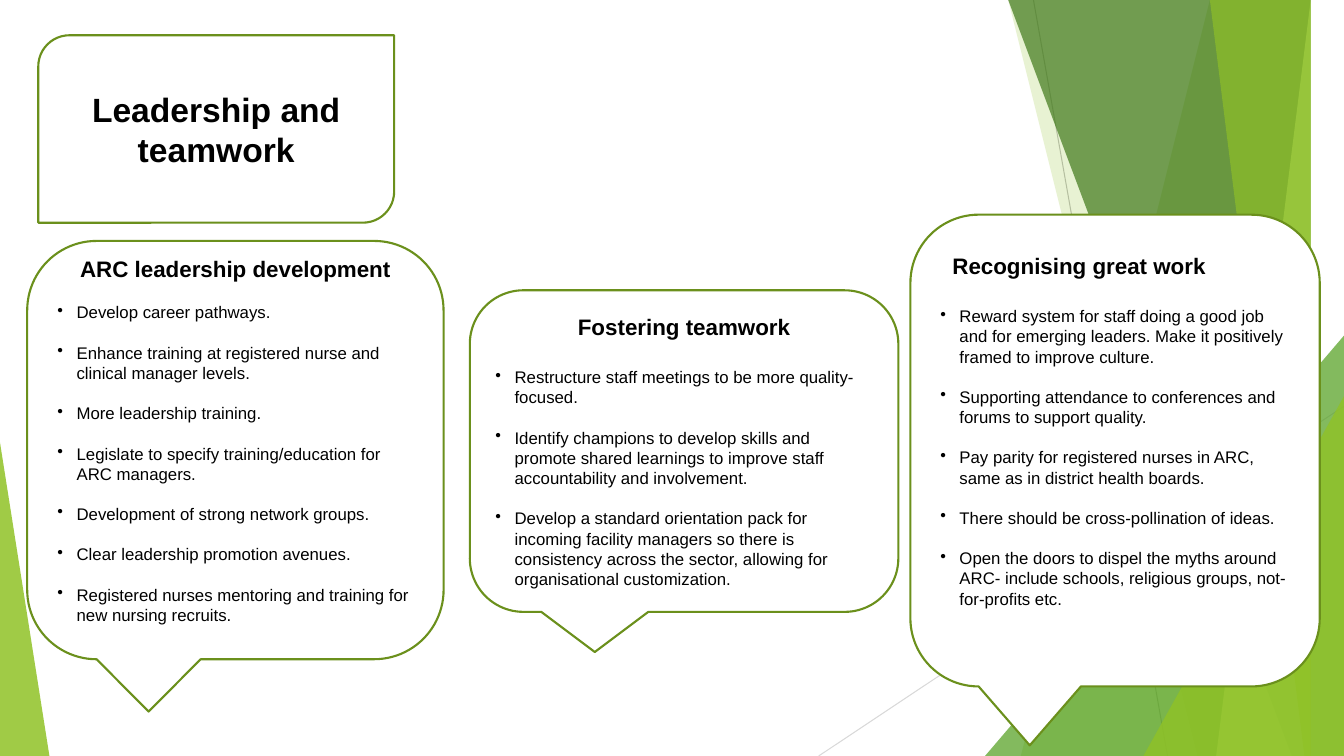
import pptx
import pptx.dml.color
import pptx.enum.shapes
import pptx.enum.text
import pptx.oxml
import pptx.oxml.ns
import pptx.util
from lxml import etree

Inches, Pt = pptx.util.Inches, pptx.util.Pt
SHAPE = pptx.enum.shapes.MSO_SHAPE
ALIGN = pptx.enum.text.PP_ALIGN
qn = pptx.oxml.ns.qn

W, H = 13.33, 7.5
FONT = "Arial"
LEADING = 1.2
INSET = 0.05
BULLET_INDENT = 0.19
COLORS = {
    "white": "FFFFFF", "black": "000000", "outline": "6B901C",
    "lime": "90C226", "green": "54A021", "forest": "3F7819", "pale": "C0E474",
    "gray": "BFBFBF", "light gray": "D9D9D9",
}

# start, end, colour
RAYS = [
    ((10.25, 0), (11.58, H), "gray"),
    ((W, 4.03), (8.12, H), "light gray"),
]
# Bands reach the right edge: ("band", top x, bottom x, colour, opacity %)
# Wedges stand on the bottom edge: ("wedge", left, top, width, apex share, colour, opacity %)
BACKDROP = [
    ("band", 12.28, 10.04, "lime", 30),
    ("band", 10.5, 11.83, "lime", 20),
    ("wedge", 9.77, 3.33, 3.56, 1, "green", 72),
    ("band", 10.21, 12.91, "forest", 70),
    ("band", 13.03, 11.92, "pale", 70),
    ("band", 11.96, 13.18, "lime", 65),
    ("wedge", 11.34, 3.93, 1.99, 1, "lime", 80),
    ("wedge", 0, 4.39, 0.49, 0, "lime", 85),
]

TITLE = ("Leadership and teamwork", (0.38, 0.35, 3.53, 1.86))
CALLOUTS = [
    {"heading": "Fostering teamwork", "box": (4.66, 2.88, 4.25, 3.19),
     "align": ALIGN.CENTER, "indent": 0, "gap": 16, "lift": 0,
     "points": [
         "Restructure staff meetings to be more quality-focused.",
         "Identify champions to develop skills and promote shared learnings to "
         "improve staff accountability and involvement.",
         "Develop a standard orientation pack for incoming facility managers so there "
         "is consistency across the sector, allowing for organisational customization.",
     ]},
    {"heading": "Recognising great work", "box": (9.03, 2.13, 4.06, 4.68),
     "align": ALIGN.LEFT, "indent": 0.12, "gap": 16, "lift": 0.4,
     "points": [
         "Reward system for staff doing a good job and for emerging leaders. "
         "Make it positively framed to improve culture.",
         "Supporting attendance to conferences and forums to support quality.",
         "Pay parity for registered nurses in ARC, same as in district health boards.",
         "There should be cross-pollination of ideas.",
         "Open the doors to dispel the myths around ARC- include schools, "
         "religious groups, not-for-profits etc.",
     ]},
    {"heading": "ARC leadership development", "box": (0.27, 2.39, 4.13, 4.15),
     "align": ALIGN.CENTER, "indent": 0, "gap": 12, "lift": 0.2,
     "points": [
         "Develop career pathways.",
         "Enhance training at registered nurse and clinical manager levels.",
         "More leadership training.",
         "Legislate to specify training/education for ARC managers.",
         "Development of strong network groups.",
         "Clear leadership promotion avenues.",
         "Registered nurses mentoring and training for new nursing recruits.",
     ]},
]


def rgb(name):
    return pptx.dml.color.RGBColor.from_string(COLORS[name])


def add_ray(slide, start, end, color):
    line = slide.shapes.add_connector(
        pptx.enum.shapes.MSO_CONNECTOR.STRAIGHT, *map(Inches, start + end))
    line.line.color.rgb = rgb(color)
    line.line.width = Pt(0.75)
    etree.SubElement(line._element.spPr, qn("a:effectLst"))


def add_facet(slide, kind, *spec_values):
    """Add one translucent band or wedge of the backdrop."""
    *place, color, opacity = spec_values
    if kind == "band":
        top_x, bottom_x = place
        builder = slide.shapes.build_freeform(top_x, 0, scale=Inches(1))
        builder.add_line_segments([(W, 0), (W, H), (bottom_x, H)], close=True)
        sp = builder.convert_to_shape()
    else:
        left, top, width, apex = place
        sp = slide.shapes.add_shape(
            SHAPE.ISOSCELES_TRIANGLE, *map(Inches, (left, top, width, H - top)))
        sp.adjustments[0] = apex
    sp.shadow.inherit = False
    sp.line.fill.background()
    sp.fill.solid()
    sp.fill.fore_color.rgb = rgb(color)
    tint = sp.fill._xPr.find(qn("a:solidFill"))[0]
    etree.SubElement(tint, qn("a:alpha"), val=str(opacity * 1000))


def add_card(slide, shape_type, box, lift=0):
    """Add a white outlined shape; lift moves its centred text up by half as much."""
    sp = slide.shapes.add_shape(shape_type, *map(Inches, box))
    sp.shadow.inherit = False
    sp.fill.solid()
    sp.fill.fore_color.rgb = rgb("white")
    sp.line.color.rgb = rgb("outline")
    sp.line.width = Pt(1.5)
    tf = sp.text_frame
    tf.word_wrap = True
    tf.vertical_anchor = pptx.enum.text.MSO_ANCHOR.MIDDLE
    tf.margin_top, tf.margin_bottom = Inches(INSET), Inches(INSET + lift)
    return tf


def write(p, text, size, bold=False, align=ALIGN.LEFT, gap=0):
    """Fill a paragraph; gap is the type size of the empty line's worth of space after it."""
    p.text = text
    p.alignment = align
    p.font.name, p.font.size, p.font.bold = FONT, Pt(size), bold
    p.font.color.rgb = rgb("black")
    p.line_spacing = Pt(size * LEADING)
    p.space_after = Pt(gap * LEADING)


def set_indent(p, left, first=0):
    pPr = p._p.get_or_add_pPr()
    pPr.set("marL", str(Inches(left)))
    pPr.set("indent", str(Inches(first)))
    return pPr


def add_bullet(p):
    pPr = set_indent(p, BULLET_INDENT, -BULLET_INDENT)
    bullet = pptx.oxml.parse_xml(
        '<a:buChar xmlns:a="http://schemas.openxmlformats.org/drawingml/2006/main" char="•"/>')
    pPr.find(qn("a:defRPr")).addprevious(bullet)


def add_callout(slide, callout):
    tf = add_card(slide, SHAPE.ROUNDED_RECTANGULAR_CALLOUT, callout["box"], callout["lift"])
    p = tf.paragraphs[0]
    write(p, callout["heading"], 16, True, callout["align"], callout["gap"])
    set_indent(p, callout["indent"])
    for point in callout["points"]:
        p = tf.add_paragraph()
        write(p, point, 12, gap=0 if point == callout["points"][-1] else 12)
        add_bullet(p)


def main():
    prs = pptx.Presentation()
    prs.slide_width, prs.slide_height = Inches(W), Inches(H)
    slide = prs.slides.add_slide(prs.slide_layouts[6])
    for ray in RAYS:
        add_ray(slide, *ray)
    for facet in BACKDROP:
        add_facet(slide, *facet)
    for callout in CALLOUTS:
        add_callout(slide, callout)
    title, box = TITLE
    tf = add_card(slide, SHAPE.ROUND_2_DIAG_RECTANGLE, box)
    write(tf.paragraphs[0], title, 24, True, ALIGN.CENTER)
    prs.save("out.pptx")


if __name__ == "__main__":
    main()
